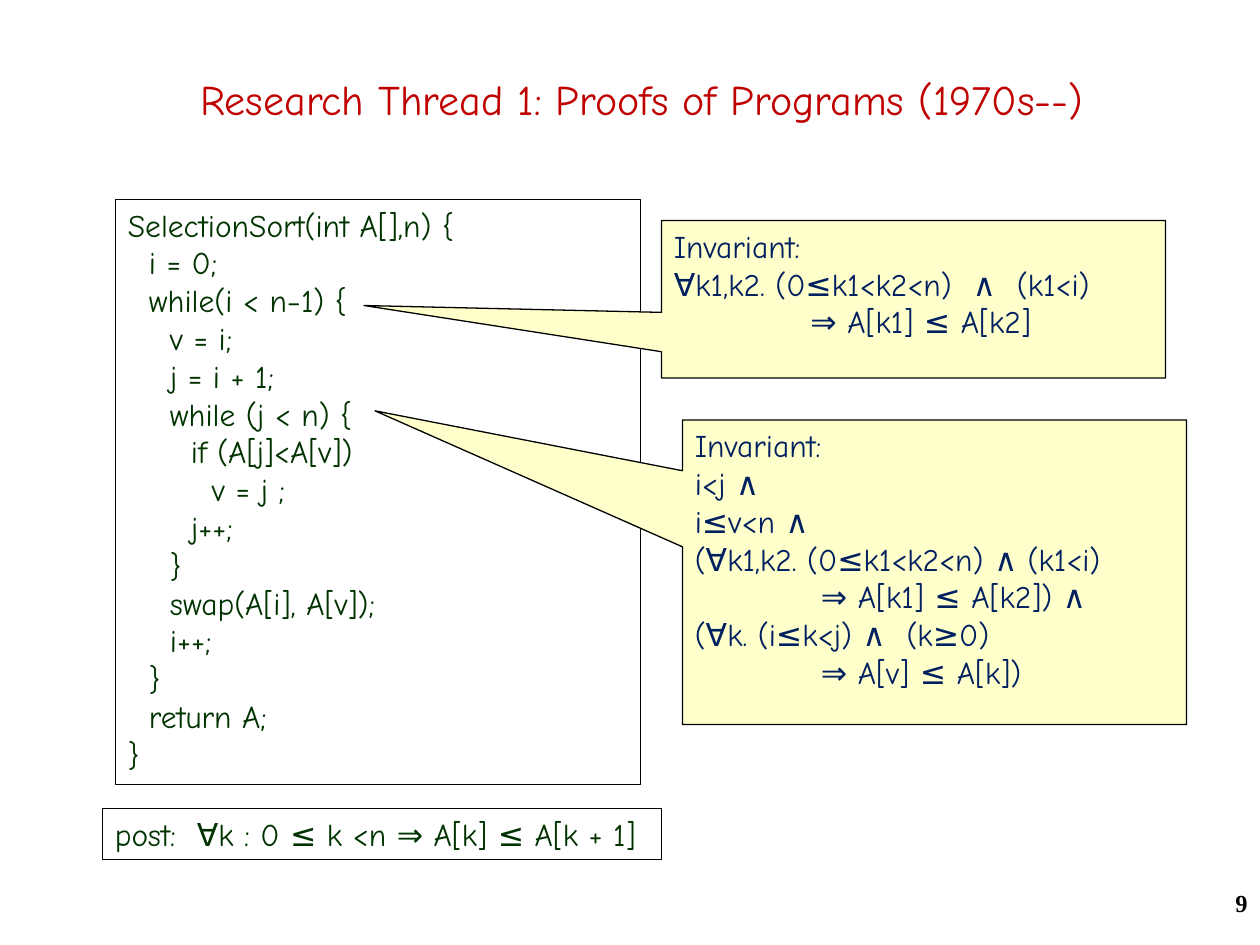
from pptx import Presentation
from pptx.dml.color import RGBColor
from pptx.enum.shapes import MSO_SHAPE
from pptx.enum.text import MSO_ANCHOR, PP_ALIGN
from pptx.util import Inches, Pt

RECTANGLE = MSO_SHAPE.RECTANGLE
CALLOUT = MSO_SHAPE.RECTANGULAR_CALLOUT
TOP, MIDDLE = MSO_ANCHOR.TOP, MSO_ANCHOR.MIDDLE
LEFT, CENTER, RIGHT = PP_ALIGN.LEFT, PP_ALIGN.CENTER, PP_ALIGN.RIGHT

GREEN, NAVY, YELLOW = "003300", "002060", "FFFFCC"
CELL = Inches(10) / 120
INDENT = Inches(1) / 6


def color(value):
    return RGBColor.from_string(value)


def write(shape, lines, ink, size=18, font="Comic Neue", align=LEFT, anchor=TOP, bold=False):
    frame = shape.text_frame
    frame.word_wrap = True
    frame.vertical_anchor = anchor
    for number, (level, text) in enumerate(lines):
        paragraph = frame.add_paragraph() if number else frame.paragraphs[0]
        paragraph.text = text
        paragraph.alignment = align
        paragraph.font.name = font
        paragraph.font.size = Pt(size)
        paragraph.font.bold = bold
        paragraph.font.color.rgb = color(ink)
        if level:
            properties = paragraph._p.get_or_add_pPr()
            properties.set("marL", str(round(level * INDENT)))
            properties.set("indent", "0")


presentation = Presentation()
presentation.slide_width = Inches(10)
presentation.slide_height = Inches(7.5)
slide = presentation.slides.add_slide(presentation.slide_layouts[6])

program = [
    (0, "SelectionSort(int A[],n) {"),
    (1, "i = 0;"),
    (1, "while(i < n−1) {"),
    (2, "v = i;"),
    (2, "j = i + 1;"),
    (2, "while (j < n) {"),
    (3, "if (A[j]<A[v])"),
    (4, "v = j ;"),
    (3, "j++;"),
    (2, "}"),
    (2, "swap(A[i], A[v]);"),
    (2, "i++;"),
    (1, "}"),
    (1, "return A;"),
    (0, "}"),
]
postcondition = [(0, "post:  ∀k : 0 ≤ k <n ⇒ A[k] ≤ A[k + 1]")]
outer_invariant = [
    (0, "Invariant:"),
    (0, "∀k1,k2. (0≤k1<k2<n)  ∧  (k1<i)"),
    (6.5, "⇒ A[k1] ≤ A[k2]"),
]
inner_invariant = [
    (0, "Invariant:"),
    (0, "i<j ∧"),
    (0, "i≤v<n ∧"),
    (0, "(∀k1,k2. (0≤k1<k2<n) ∧ (k1<i)"),
    (6, "⇒ A[k1] ≤ A[k2]) ∧"),
    (0, "(∀k. (i≤k<j) ∧  (k≥0)"),
    (6, "⇒ A[v] ≤ A[k])"),
]

title = slide.shapes.add_textbox(*[round(n * CELL) for n in (2.25, 2.2, 117.75, 14.4)])
write(title, [(0, "Research Thread 1: Proofs of Programs (1970s--)")], "C00000", 24, align=CENTER, anchor=MIDDLE)

boxes = [
    (RECTANGLE, (11, 19, 50, 55.7), None, None, GREEN, program),
    (RECTANGLE, (9.75, 77, 53.25, 4.85), None, None, GREEN, postcondition),
    (CALLOUT, (63, 21, 48, 15), (-1.09, 0.04), YELLOW, NAVY, outer_invariant),
    (CALLOUT, (65, 40, 48, 29), (-1.11, -0.53), YELLOW, NAVY, inner_invariant),
]
for kind, place, pointer, fill, ink, lines in boxes:
    shape = slide.shapes.add_shape(kind, *[round(n * CELL) for n in place])
    shape.shadow.inherit = False
    shape.line.color.rgb = color("000000")
    shape.line.width = Pt(0.75)
    if fill:
        shape.fill.solid()
        shape.fill.fore_color.rgb = color(fill)
        shape.adjustments[0], shape.adjustments[1] = pointer
    else:
        shape.fill.background()
    write(shape, lines, ink)

page_number = slide.shapes.add_textbox(*[round(n * CELL) for n in (95, 84, 25, 6)])
write(page_number, [(0, "9")], "000000", 14, "Times New Roman", RIGHT, bold=True)

presentation.save("out.pptx")
